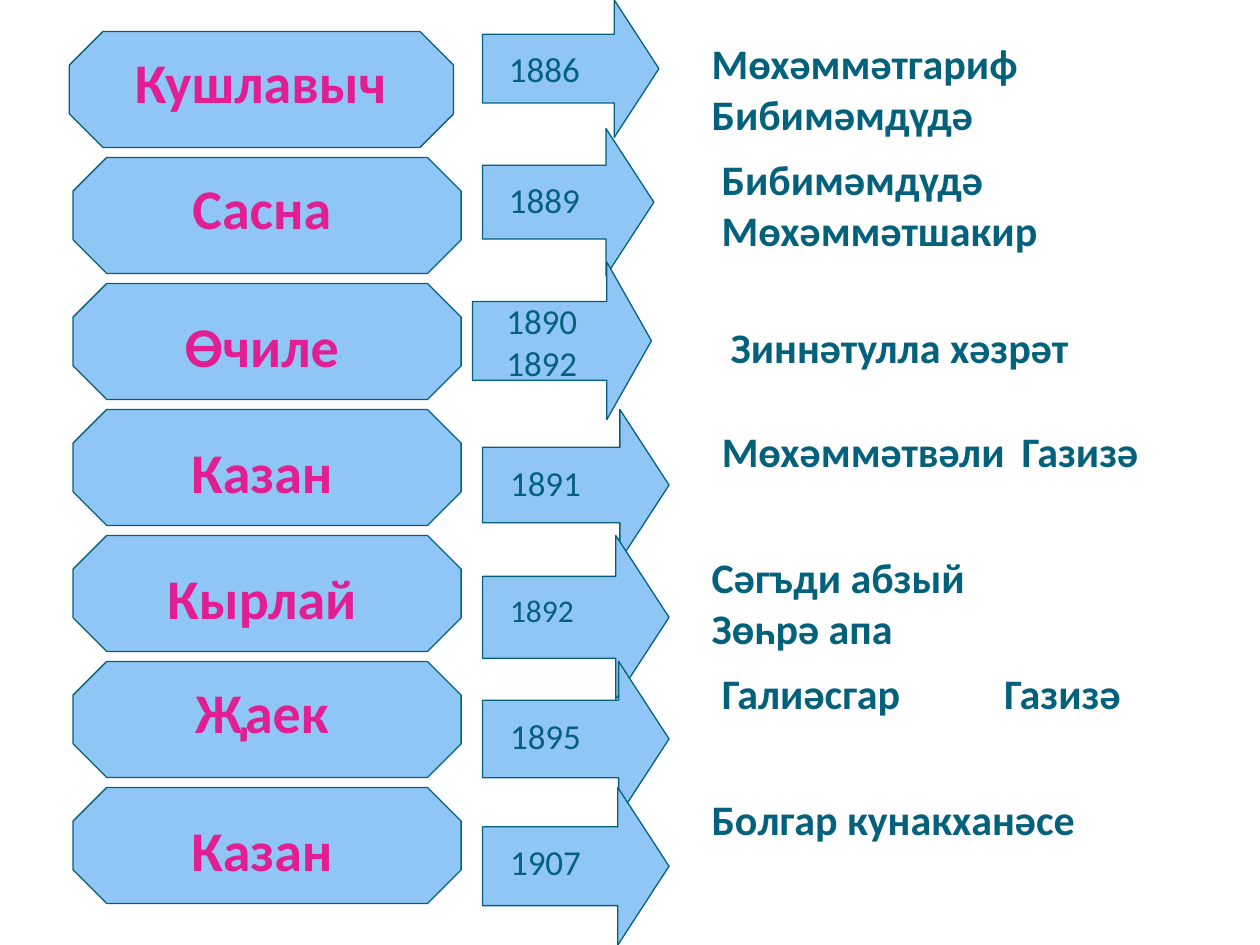
"""Build a slide of places, years and people joined by arrows."""
from lxml.etree import SubElement
from pptx import Presentation
from pptx.dml.color import RGBColor
from pptx.enum.shapes import MSO_SHAPE as SHAPE
from pptx.enum.text import PP_ALIGN as ALIGN
from pptx.oxml.ns import qn
from pptx.util import Inches, Pt

COLORS = {"fill": "90C6F6", "ink": "04617B", "place": "E21E93"}


def add_block(kind, box, adjustments):
    shape = s.shapes.add_shape(kind, *map(Inches, box))
    shape.shadow.inherit = False
    shape.fill.solid()
    shape.fill.fore_color.rgb = RGBColor.from_string(COLORS["fill"])
    shape.line.color.rgb = RGBColor.from_string(COLORS["ink"])
    shape.line.width = Pt(0.75)
    for i, value in enumerate(adjustments):
        shape.adjustments[i] = value


def add_text(text, box, size, color="ink", bold=False, align=ALIGN.LEFT, tab=None):
    tf = s.shapes.add_textbox(*map(Inches, box)).text_frame
    tf.word_wrap = True
    p = tf.paragraphs[0]
    p.text = text
    p.alignment = align
    if tab:
        tabs = SubElement(p._p.get_or_add_pPr(), qn("a:tabLst"))
        SubElement(tabs, qn("a:tab"), pos=str(Inches(tab)), algn="l")
    for r in p.runs:
        r.font.name = "Calibri"
        r.font.size = Pt(size)
        r.font.bold = bold
        r.font.color.rgb = RGBColor.from_string(COLORS[color])


prs = Presentation()
prs.slide_width, prs.slide_height = Inches(10), Inches(7.5)
s = prs.slides.add_slide(prs.slide_layouts[6])

places = [
    ("Кушлавыч", 0.08), ("Сасна", 0.08), ("Өчиле", 0.17), ("Казан", 0.17),
    ("Кырлай", 0.17), ("Җаек", 0.08), ("Казан", 0.17),
]
for row, (place, drop) in enumerate(places):
    top = 0.25 + row
    left, width = (0.58, 3.08) if row else (0.55, 3.05)
    text_left, text_width = (0.83, 2.5) if row else (0.71, 2.72)
    add_block(SHAPE.OCTAGON, (left, top, width, 0.92), [0.29])
    add_text(place, (text_left, top + drop, text_width, 0.63), 32, "place", True, ALIGN.CENTER)

people = [
    ("Мөхәммәтгариф Бибимәмдүдә", (5.55, 0.25, 4.22, 0.91), None),
    ("Бибимәмдүдә Мөхәммәтшакир", (5.63, 1.17, 4.14, 0.91), None),
    ("Зиннәтулла хәзрәт", (5.7, 2.5, 3.75, 0.5), None),
    ("Мөхәммәтвәли\tГазизә", (5.63, 3.33, 3.98, 0.5), 2.38),
    ("Сәгъди абзый\vЗөһрә апа", (5.55, 4.33, 3.91, 0.91), None),
    ("Галиәсгар\tГазизә", (5.63, 5.25, 3.62, 0.5), 2.24),
    ("Болгар кунакханәсе", (5.55, 6.25, 3.36, 0.5), None),
]
for names, box, tab in people:
    add_text(names, box, 24, bold=True, tab=tab)

arrows = [
    ("1889", (3.83, 1.02, 1.36, 1.17), 0.325, (3.94, 1.37, 1.45, 0.36), 20),
    ("1890\v1892", (3.75, 2.08, 1.42, 1.25), 0.283, (3.92, 2.33, 0.83, 0.77), 20),
    ("1891", (3.83, 3.25, 1.48, 1.2), 0.325, (3.95, 3.61, 1.14, 0.63), 20),
    ("1892", (3.83, 4.25, 1.48, 1.3), 0.325, (3.95, 4.64, 1.14, 0.68), 18),
    ("1895", (3.83, 5.25, 1.48, 1.23), 0.325, (3.95, 5.62, 1.14, 0.64), 20),
    ("1907", (3.83, 6.25, 1.48, 1.25), 0.325, (3.95, 6.62, 1.14, 0.65), 20),
    ("1886", (3.83, 0, 1.4, 1.09), 0.325, (3.94, 0.33, 1.08, 0.57), 20),
]
for year, box, head, text_box, size in arrows:
    add_block(SHAPE.RIGHT_ARROW, box, [0.5, head])
    add_text(year, text_box, size)

prs.save("out.pptx")
